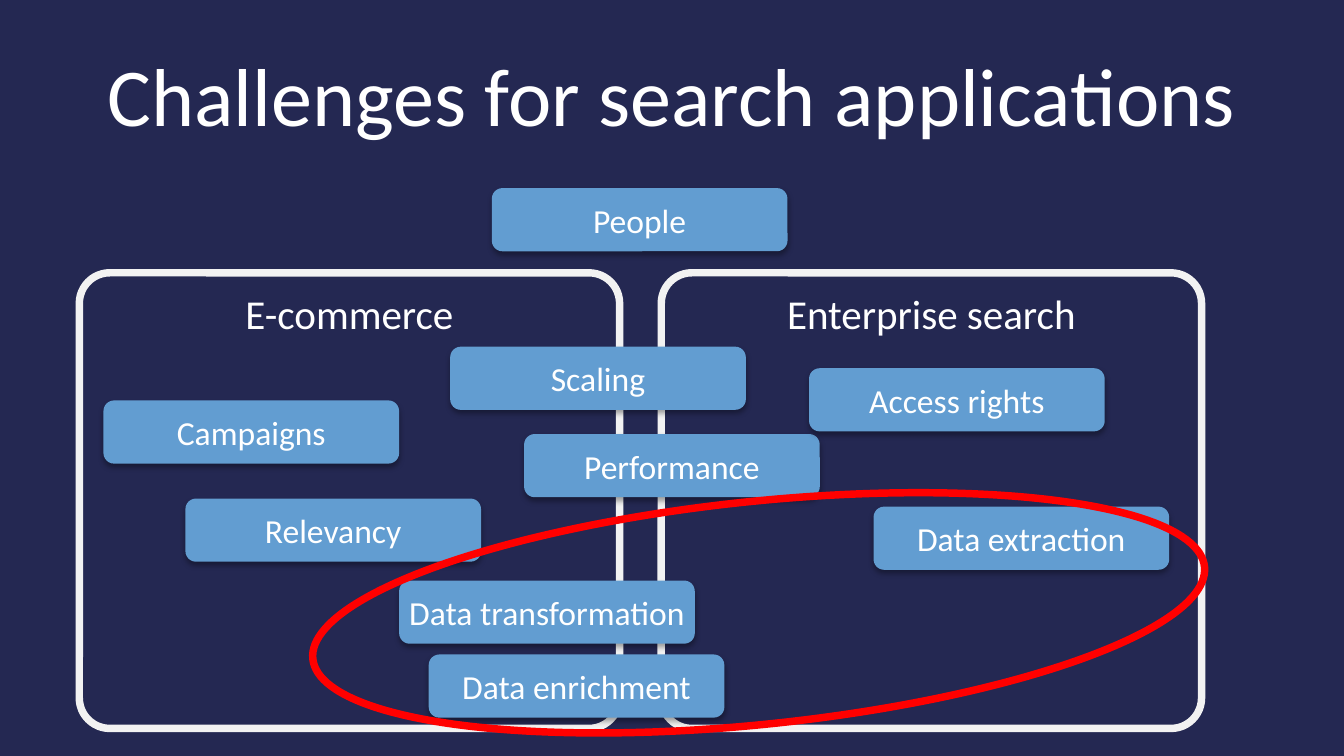
from lxml import etree
from pptx import Presentation
from pptx import util as u
from pptx.dml.color import RGBColor
from pptx.enum import shapes, text
from pptx.oxml import ns

NAVY = RGBColor(0x24, 0x28, 0x52)
BLUE = RGBColor(0x62, 0x9D, 0xD1)
WHITE = RGBColor(0xFF, 0xFF, 0xFF)
PALE = RGBColor(0xF2, 0xF2, 0xF2)
RED = RGBColor(0xFF, 0x00, 0x00)
BLACK = RGBColor(0x00, 0x00, 0x00)


def write(box, words, size=18, anchor=text.MSO_ANCHOR.MIDDLE, side=0.1):
    frame = box.text_frame
    frame.word_wrap = True
    frame.vertical_anchor = anchor
    frame.margin_left = frame.margin_right = u.Inches(side)
    para = frame.paragraphs[0]
    para.alignment = text.PP_ALIGN.CENTER
    span = para.add_run()
    span.text = words
    span.font.name = "Calibri"
    span.font.size = u.Pt(size)
    span.font.color.rgb = WHITE


def add_shadow(box):
    effects = box._element.spPr.find(ns.qn("a:effectLst"))
    shadow = etree.SubElement(effects, ns.qn("a:outerShdw"), blurRad=str(u.Pt(3.1)),
                              dist=str(u.Pt(1.8)), dir="5400000", rotWithShape="0")
    color = etree.SubElement(shadow, ns.qn("a:srgbClr"), val=str(BLACK))
    etree.SubElement(color, ns.qn("a:alpha"), val="35000")


deck = Presentation()
deck.slide_width = u.Inches(10)
deck.slide_height = u.Inches(10) * 9 // 16
page = deck.slides.add_slide(deck.slide_layouts[6])
page.background.fill.solid()
page.background.fill.fore_color.rgb = NAVY

title = page.shapes.add_textbox(u.Inches(0.5), u.Inches(0.23), u.Inches(9), u.Inches(0.94))
write(title, "Challenges for search applications", size=44)

for left, name in [(0.59, "E-commerce"), (4.92, "Enterprise search")]:
    panel = page.shapes.add_shape(shapes.MSO_SHAPE.ROUNDED_RECTANGLE, u.Inches(left),
                                  u.Inches(2.03), u.Inches(4.02), u.Inches(3.39))
    panel.adjustments[0] = 0.067
    panel.shadow.inherit = False
    panel.fill.background()
    panel.line.color.rgb = PALE
    panel.line.width = u.Pt(4)
    write(panel, name, size=22, anchor=text.MSO_ANCHOR.TOP)

challenges = [
    ("People", 3.66, 1.4),
    ("Relevancy", 1.38, 3.71),
    ("Scaling", 3.35, 2.58),
    ("Performance", 3.9, 3.23),
    ("Access rights", 6.02, 2.74),
    ("Data extraction", 6.5, 3.77),
    ("Campaigns", 0.77, 2.98),
    ("Data transformation", 2.97, 4.32),
    ("Data enrichment", 3.19, 4.87),
]
for name, left, top in challenges:
    box = page.shapes.add_shape(shapes.MSO_SHAPE.ROUNDED_RECTANGLE, u.Inches(left),
                                u.Inches(top), u.Inches(2.2), u.Inches(0.47))
    box.shadow.inherit = False
    box.fill.solid()
    box.fill.fore_color.rgb = BLUE
    box.line.fill.background()
    add_shadow(box)
    write(box, name, side=0.04)

highlight = page.shapes.add_shape(shapes.MSO_SHAPE.OVAL, u.Inches(2.31), u.Inches(3.73),
                                  u.Inches(6.67), u.Inches(1.66))
highlight.rotation = 354.1
highlight.shadow.inherit = False
highlight.fill.background()
highlight.line.color.rgb = RED
highlight.line.width = u.Pt(4)

deck.save("out.pptx")
